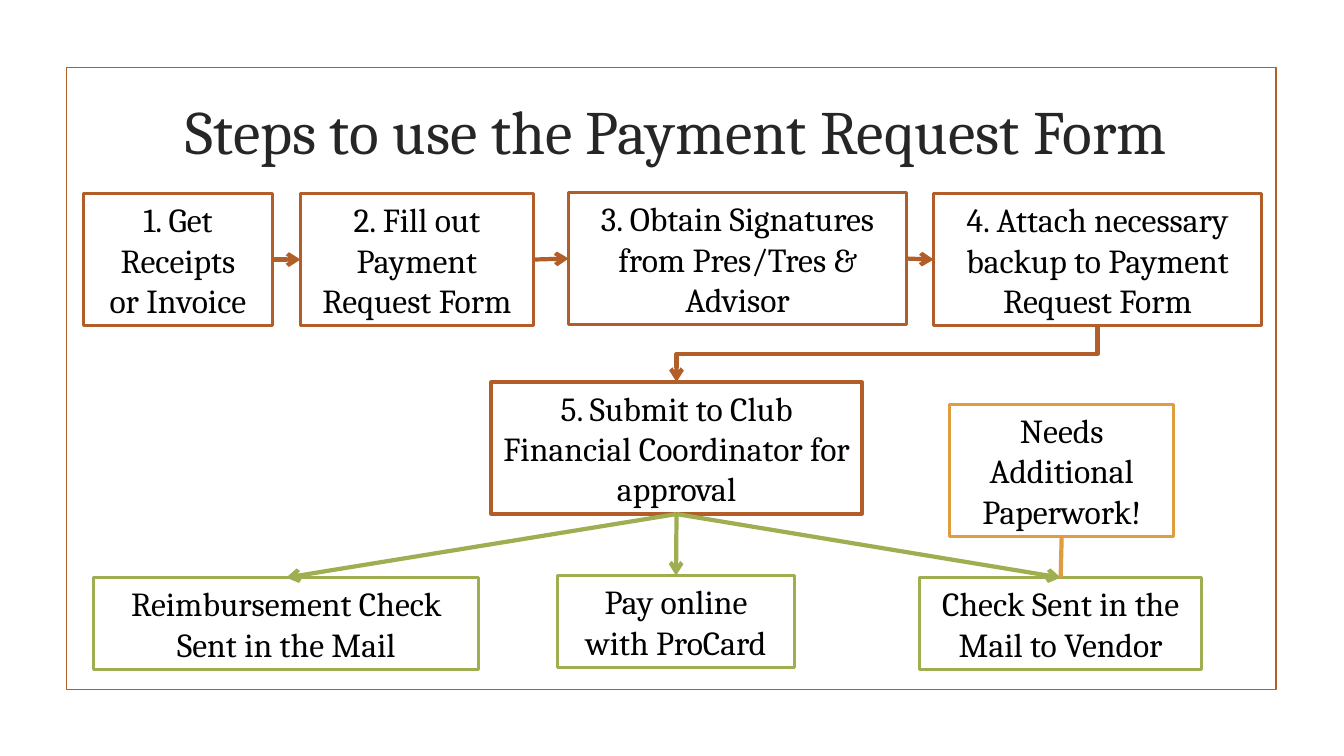
from lxml.etree import SubElement
from pptx import Presentation
from pptx.dml.color import RGBColor
from pptx.enum.shapes import MSO_CONNECTOR, MSO_SHAPE
from pptx.enum.text import MSO_ANCHOR, MSO_AUTO_SIZE, PP_ALIGN
from pptx.oxml.ns import qn
from pptx.util import Inches, Pt

FONT = "Cambria"
COLORS = {"step": "B15E28", "outcome": "9EAE51", "notice": "E09C41",
          "title": "262626", "text": "000000"}
TITLE = "Steps to use the Payment Request Form"
TITLE_AREA = (1.25, 0.85, 10.92, 0.87)
FRAME_AREA = (0.66, 0.67, 12, 6.17)
BOX_HEIGHTS = {2: 0.91, 3: 1.31}  # by number of text lines

# name: (text, color, left, top, width, lines)
BOXES = {
    "receipts": ("1. Get Receipts\nor Invoice", "step", 0.83, 1.92, 1.87, 3),
    "form": ("2. Fill out Payment Request Form", "step", 2.98, 1.92, 2.31, 3),
    "signatures": ("3. Obtain Signatures from Pres/Tres & Advisor", "step", 5.64, 1.91, 3.35, 3),
    "backup": ("4. Attach necessary backup to Payment Request Form", "step", 9.26, 1.92, 3.25, 3),
    "submit": ("5. Submit to Club Financial Coordinator for approval", "step", 4.87, 3.79, 3.68, 3),
    "reimburse": ("Reimbursement Check Sent in the Mail", "outcome", 0.93, 5.73, 3.82, 2),
    "online": ("Pay online\nwith ProCard", "outcome", 5.53, 5.71, 2.35, 2),
    "vendor": ("Check Sent in the Mail to Vendor", "outcome", 9.12, 5.73, 2.8, 2),
    "paperwork": ("Needs Additional Paperwork!", "notice", 9.42, 4.01, 2.22, 3),
}

# Connection sites of a rectangle
TOP, LEFT, BOTTOM, RIGHT = range(4)
# (from, site, to, site, color, has arrowhead)
LINKS = [
    ("receipts", RIGHT, "form", LEFT, "step", True),
    ("form", RIGHT, "signatures", LEFT, "step", True),
    ("signatures", RIGHT, "backup", LEFT, "step", True),
    ("submit", BOTTOM, "reimburse", TOP, "outcome", True),
    ("submit", BOTTOM, "online", TOP, "outcome", True),
    ("submit", BOTTOM, "vendor", TOP, "outcome", True),
    ("paperwork", BOTTOM, "vendor", TOP, "notice", False),
]


def write_text(shape, text, size, color):
    frame = shape.text_frame
    frame.word_wrap = True
    frame.vertical_anchor = MSO_ANCHOR.MIDDLE
    para = frame.paragraphs[0]
    para.text = text
    para.alignment = PP_ALIGN.CENTER
    for span in para.runs:
        span.font.name = FONT
        span.font.size = Pt(size)
        span.font.color.rgb = RGBColor.from_string(COLORS[color])


def set_line(shape, color, width):
    shape.line.color.rgb = RGBColor.from_string(COLORS[color])
    shape.line.width = Pt(width)


def add_outline(slide, area, color, width):
    """Add an unfilled rectangle."""
    box = slide.shapes.add_shape(MSO_SHAPE.RECTANGLE, *map(Inches, area))
    box.shadow.inherit = False
    box.fill.background()
    set_line(box, color, width)
    return box


def add_link(slide, kind, start, start_site, end, end_site, color, arrow):
    link = slide.shapes.add_connector(kind, 0, 0, 0, 0)
    link.begin_connect(start, start_site)
    link.end_connect(end, end_site)
    set_line(link, color, 3)
    if arrow:
        SubElement(link.line._get_or_add_ln(), qn("a:tailEnd"), type="arrow")
    SubElement(link._element.spPr, qn("a:effectLst"))
    return link


def turn_upright(link):
    """Turn an elbow a quarter, so that it leaves downward and ends to the lower left."""
    left, top, width, height = link.left, link.top, link.width, link.height
    link.left = left + (width - height) // 2
    link.top = top + (height - width) // 2
    link.width, link.height = height, width
    transform = link._element.spPr.find(qn("a:xfrm"))
    transform.attrib.pop("flipH", None)
    transform.set("rot", str(90 * 60000))


def main():
    deck = Presentation()
    deck.slide_width, deck.slide_height = Inches(13.33), Inches(7.5)
    slide = deck.slides.add_slide(deck.slide_layouts[5])

    title = slide.shapes.title
    title.left, title.top, title.width, title.height = map(Inches, TITLE_AREA)
    write_text(title, TITLE, 44, "title")
    title.text_frame.auto_size = MSO_AUTO_SIZE.NONE
    add_outline(slide, FRAME_AREA, "step", 1.25)

    boxes = {}
    for name, (text, color, left, top, width, lines) in BOXES.items():
        area = (left, top, width, BOX_HEIGHTS[lines])
        boxes[name] = add_outline(slide, area, color, 2.25)
        write_text(boxes[name], text, 24, "text")
        boxes[name].text_frame.auto_size = MSO_AUTO_SIZE.SHAPE_TO_FIT_TEXT

    for start, start_site, end, end_site, color, arrow in LINKS:
        add_link(slide, MSO_CONNECTOR.STRAIGHT, boxes[start], start_site,
                 boxes[end], end_site, color, arrow)
    turn_upright(add_link(slide, MSO_CONNECTOR.ELBOW, boxes["backup"], BOTTOM,
                          boxes["submit"], TOP, "step", True))

    deck.save("out.pptx")


if __name__ == "__main__":
    main()
